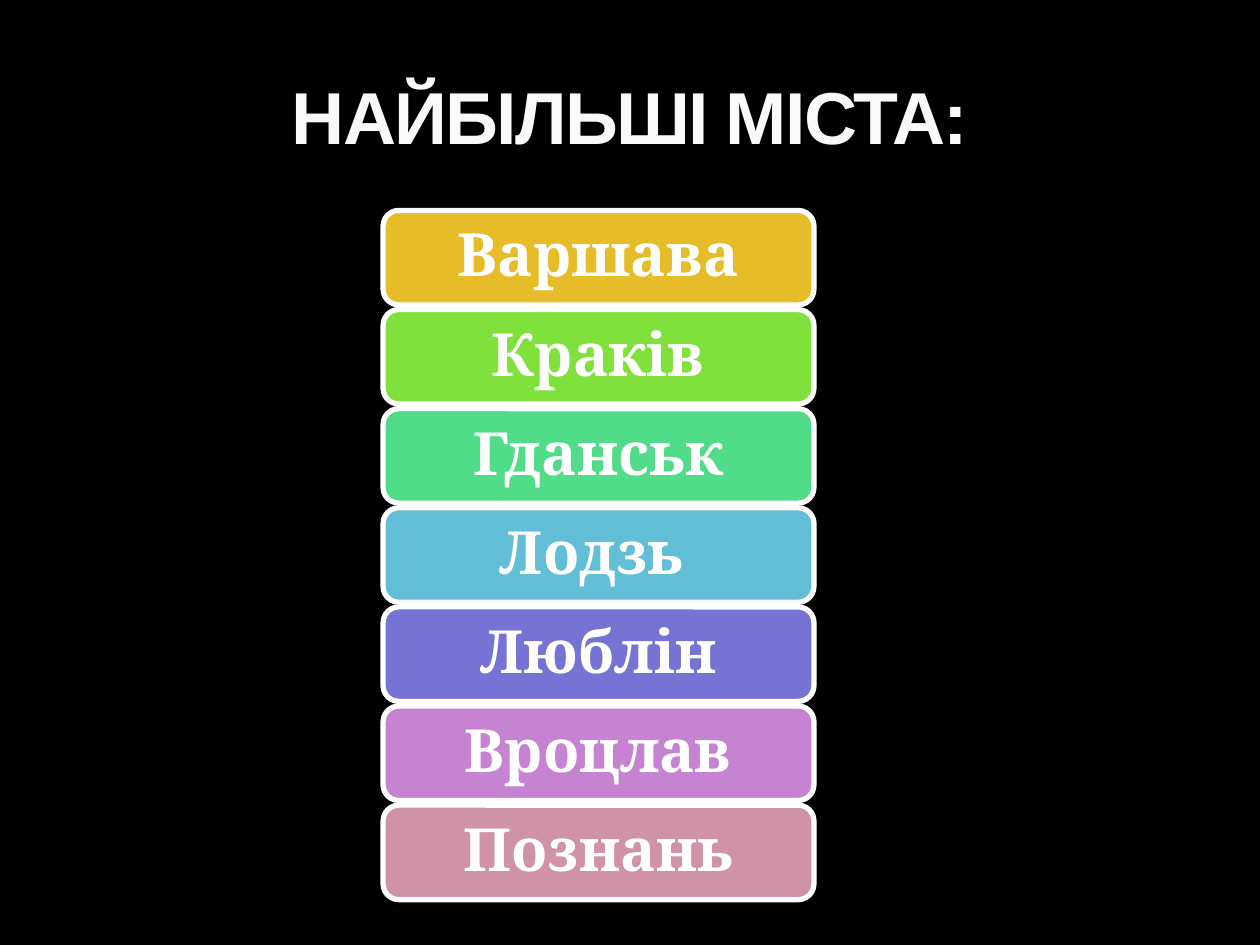
from lxml.etree import fromstring
from pptx import Presentation
from pptx.dml.color import RGBColor
from pptx.enum.shapes import MSO_SHAPE
from pptx.enum.text import MSO_ANCHOR, PP_ALIGN
from pptx.oxml.ns import nsdecls
from pptx.util import Inches, Pt

COLORS = {
    "background": "000000",
    "title": "F9F9F9",
    "title_outline": "3C4422",
    "white": "FFFFFF",
    "gold": "E7BC29",
    "lime": "80E13D",
    "green": "50DC88",
    "sky": "62BED7",
    "violet": "7673D4",
    "orchid": "C583D2",
    "rose": "D092A7",
}

CITIES = [
    ("Варшава", "gold"),
    ("Краків", "lime"),
    ("Гданськ", "green"),
    ("Лодзь ", "sky"),
    ("Люблін", "violet"),
    ("Вроцлав", "orchid"),
    ("Познань", "rose"),
]

LEFT, WIDTH, HEIGHT = 3.04, 3.42, 0.75
FIRST_TOP, LAST_TOP = 1.67, 6.39


def rgb(name):
    return RGBColor.from_string(COLORS[name])


class CitySlide:
    title_font = {"name": "Arial", "size": Pt(42), "bold": True}
    city_font = {"name": "Cambria", "size": Pt(34), "bold": True}
    city_paragraph = {
        "alignment": PP_ALIGN.CENTER,
        "line_spacing": 0.9,
        "space_after": Pt(12),
    }
    city_frame = {
        "word_wrap": True,
        "vertical_anchor": MSO_ANCHOR.MIDDLE,
        "margin_left": Inches(0.14),
        "margin_right": Inches(0.14),
        "margin_top": Inches(0.07),
        "margin_bottom": Inches(0.07),
    }

    def __init__(self, prs):
        self.s = prs.slides.add_slide(prs.slide_layouts[5])
        fill = self.s.background.fill
        fill.solid()
        fill.fore_color.rgb = rgb("background")

    def apply(self, target, values):
        for key, value in values.items():
            setattr(target, key, value)

    def run(self, p, text, font, color):
        r = p.add_run()
        r.text = text
        self.apply(r.font, font)
        r.font.color.rgb = rgb(color)
        return r

    def title(self, text, left, top, width, height):
        sp = self.s.shapes.title
        self.apply(sp, {
            "left": Inches(left),
            "top": Inches(top),
            "width": Inches(width),
            "height": Inches(height),
        })
        tf = sp.text_frame
        tf.vertical_anchor = MSO_ANCHOR.BOTTOM
        p = tf.paragraphs[0]
        p.alignment = PP_ALIGN.CENTER
        r = self.run(p, text, self.title_font, "title")
        rPr = r._r.get_or_add_rPr()
        rPr.set("spc", "-100")
        rPr.insert(0, fromstring(
            f'<a:ln {nsdecls("a")} w="3175"><a:solidFill>'
            f'<a:srgbClr val="{COLORS["title_outline"]}"><a:alpha val="25000"/></a:srgbClr>'
            '</a:solidFill></a:ln>'
        ))

    def city(self, text, color, top):
        sp = self.s.shapes.add_shape(
            MSO_SHAPE.ROUNDED_RECTANGLE,
            Inches(LEFT), Inches(top), Inches(WIDTH), Inches(HEIGHT),
        )
        sp.shadow.inherit = False
        sp.fill.solid()
        sp.fill.fore_color.rgb = rgb(color)
        sp.line.color.rgb = rgb("white")
        sp.line.width = Pt(3)
        tf = sp.text_frame
        self.apply(tf, self.city_frame)
        p = tf.paragraphs[0]
        self.apply(p, self.city_paragraph)
        self.run(p, text, self.city_font, "white")


def main():
    prs = Presentation()
    prs.slide_width = Inches(10)
    prs.slide_height = Inches(7.5)
    slide = CitySlide(prs)
    slide.title("НАЙБІЛЬШІ МІСТА:", 0.5, 0.17, 9, 1.14)
    step = (LAST_TOP - FIRST_TOP) / (len(CITIES) - 1)
    for i, (name, color) in enumerate(CITIES):
        slide.city(name, color, FIRST_TOP + i * step)
    prs.save("out.pptx")


if __name__ == "__main__":
    main()
